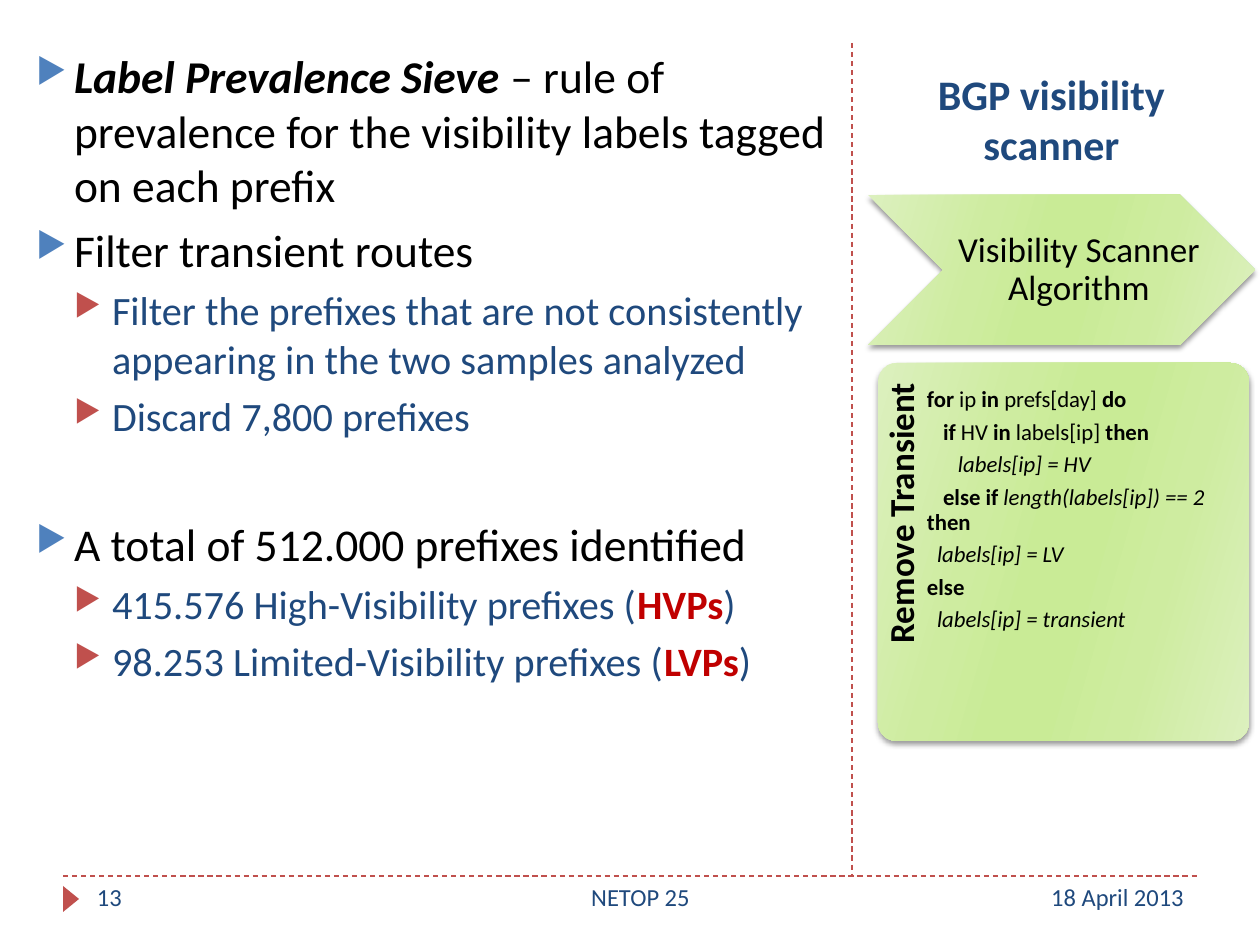
from dataclasses import dataclass

from lxml import etree
from pptx import Presentation
from pptx.dml.color import RGBColor
from pptx.enum.dml import MSO_LINE
from pptx.enum.shapes import MSO_CONNECTOR, MSO_SHAPE
from pptx.enum.text import MSO_ANCHOR, PP_ALIGN
from pptx.oxml.ns import qn
from pptx.util import Emu, Pt

LEFT, CENTER, RIGHT = PP_ALIGN.LEFT, PP_ALIGN.CENTER, PP_ALIGN.RIGHT
TOP, MIDDLE, BOTTOM = MSO_ANCHOR.TOP, MSO_ANCHOR.MIDDLE, MSO_ANCHOR.BOTTOM
EMU_PER_PX = 914400 / 126


@dataclass(frozen=True)
class Theme:
    font: str = "Calibri"
    black: str = "000000"
    navy: str = "1F497D"
    blue: str = "4F81BD"
    red: str = "C0504D"
    strong_red: str = "C00000"
    green_stops: tuple = ((0, "DCF0BE"), (30, "CEECA0"), (45, "C9EB96"),
                          (55, "C9EB96"), (73, "CEECA0"), (100, "DCF0BE"))
    title: int = 24
    point: int = 26
    subpoint: int = 23
    label: int = 20
    footer: int = 14
    code: int = 13


THEME = Theme()

# Each bullet: level, space before in points, runs of (text, style, colour)
BULLETS = [
    (0, 6, [("Label Prevalence Sieve ", "bi", THEME.black),
            ("– rule of prevalence for the visibility labels tagged on each prefix",
             "", THEME.black)]),
    (0, 6, [("Filter transient routes", "", THEME.black)]),
    (1, 5, [("Filter the prefixes that are not consistently appearing in the "
             "two samples analyzed", "", THEME.navy)]),
    (1, 5, [("Discard 7,800 prefixes", "", THEME.navy)]),
    (0, 44, [("A total of 512.000 prefixes identified", "", THEME.black)]),
    (1, 5, [("415.576 High-Visibility prefixes (", "", THEME.navy),
            ("HVPs", "b", THEME.strong_red), (")", "", THEME.navy)]),
    (1, 5, [("98.253 Limited-Visibility prefixes (", "", THEME.navy),
            ("LVPs", "b", THEME.strong_red), (")", "", THEME.navy)]),
]

# Each code line: first-line indent in px, runs of (text, style)
CODE = [
    (0, [("for ", "b"), ("ip ", ""), ("in ", "b"), ("prefs[day] ", ""), ("do", "b")]),
    (16, [("if", "b"), (" HV ", ""), ("in", "b"), (" labels[ip] ", ""), ("then", "b")]),
    (31, [("labels[ip] = HV", "i")]),
    (16, [("else if ", "b"), ("length(labels[ip]) == 2 ", "i"), ("then", "b")]),
    (10, [("labels[ip] = LV", "i")]),
    (0, [("else", "b")]),
    (10, [("labels[ip] = transient", "i")]),
]


def px(value):
    return Emu(round(value * EMU_PER_PX))


def rgb(color):
    return RGBColor.from_string(color)


def add_line(page, x1, y1, x2, y2):
    line = page.shapes.add_connector(MSO_CONNECTOR.STRAIGHT, px(x1), px(y1), px(x2), px(y2))
    line.line.color.rgb = rgb(THEME.red)
    line.line.width = Pt(0.75)
    line.line.dash_style = MSO_LINE.DASH
    etree.SubElement(line._element.spPr, qn("a:effectLst"))


def add_shape(page, kind, left, top, width, height):
    shape = page.shapes.add_shape(kind, px(left), px(top), px(width), px(height))
    shape.shadow.inherit = False
    shape.line.fill.background()
    return shape


def add_color(parent, color):
    return etree.SubElement(parent, qn("a:srgbClr"), val=color)


def add_green_shape(page, kind, *place):
    """Add a shape with the six-stop green gradient and a soft shadow below."""
    shape = add_shape(page, kind, *place)
    shape.fill.gradient()
    shape.fill.gradient_angle = 344
    properties = shape._element.spPr
    stops = properties.find(qn("a:gradFill")).find(qn("a:gsLst"))
    for stop in list(stops):
        stops.remove(stop)
    for position, color in THEME.green_stops:
        add_color(etree.SubElement(stops, qn("a:gs"), pos=str(position * 1000)), color)
    shadow = etree.SubElement(properties.find(qn("a:effectLst")), qn("a:outerShdw"),
                              blurRad=str(Pt(3)), dist=str(Pt(2)), dir="5400000",
                              rotWithShape="0")
    etree.SubElement(add_color(shadow, THEME.black), qn("a:alpha"), val="40000")
    return shape


def add_box(page, left, top, width, height, anchor=TOP, insets=(13, 6, 13, 6)):
    box = page.shapes.add_textbox(px(left), px(top), px(width), px(height))
    frame = box.text_frame
    frame.word_wrap = True
    frame.vertical_anchor = anchor
    (frame.margin_left, frame.margin_top,
     frame.margin_right, frame.margin_bottom) = map(px, insets)
    return box


def add_run(para, text, size, color, style=""):
    """Add a run; style holds "b" for bold and "i" for italic."""
    span = para.add_run()
    span.text = text
    span.font.name = THEME.font
    span.font.size = Pt(size)
    span.font.color.rgb = rgb(color)
    span.font.bold = "b" in style
    span.font.italic = "i" in style


def add_label(box, text, size, color, align, style="", spacing=1.0):
    para = box.text_frame.paragraphs[0]
    para.alignment = align
    para.line_spacing = spacing
    add_run(para, text, size, color, style)


def add_paragraphs(box, count):
    frame = box.text_frame
    return [frame.paragraphs[0]] + [frame.add_paragraph() for _ in range(count - 1)]


def set_bullet(para, level):
    properties = para._p.get_or_add_pPr()
    properties.set("marL", str(px(38 * (level + 1))))
    properties.set("indent", str(px(-38)))
    color = etree.SubElement(properties, qn("a:buClr"))
    add_color(color, THEME.red if level else THEME.blue)
    etree.SubElement(properties, qn("a:buSzPct"), val="76000")
    etree.SubElement(properties, qn("a:buChar"), char="▶")


def add_bullets(page):
    box = add_box(page, 23, 42, 827, 788)
    for para, (level, before, runs) in zip(add_paragraphs(box, len(BULLETS)), BULLETS):
        para.level = level
        para.space_before = Pt(before)
        set_bullet(para, level)
        for text, style, color in runs:
            add_run(para, text, THEME.subpoint if level else THEME.point, color, style)


def add_code(page):
    box = add_box(page, 927, 382, 299, 378, insets=(0, 6, 0, 0))
    for para, (indent, runs) in zip(add_paragraphs(box, len(CODE)), CODE):
        para.line_spacing = 0.9
        para.space_after = Pt(4.55)
        properties = para._p.get_or_add_pPr()
        properties.set("marL", "0")
        properties.set("indent", str(px(indent)))
        for text, style in runs:
            add_run(para, text, THEME.code, THEME.black, style)


def add_footer(page):
    marker = add_shape(page, MSO_SHAPE.ISOSCELES_TRIANGLE, 58, 891, 26, 16)
    marker.rotation = 90
    marker.fill.solid()
    marker.fill.fore_color.rgb = rgb(THEME.red)
    for left, width, text, align in ((84, 273, "13", LEFT),
                                     (399, 483, "NETOP 25", CENTER),
                                     (882, 315, "18 April 2013", RIGHT)):
        add_label(add_box(page, left, 876, width, 50), text, THEME.footer, THEME.navy, align)


def add_scanner(page):
    add_label(add_box(page, 858, 59, 387, 116, BOTTOM), "BGP visibility scanner",
              THEME.title, THEME.navy, CENTER, "b")
    add_green_shape(page, MSO_SHAPE.CHEVRON, 868, 195, 387, 150)
    add_label(add_box(page, 925, 195, 300, 150, MIDDLE, (13, 5, 5, 5)),
              "Visibility Scanner Algorithm", THEME.label, THEME.black, CENTER, spacing=0.9)
    panel = add_green_shape(page, MSO_SHAPE.ROUNDED_RECTANGLE, 878, 363, 371, 378)
    panel.adjustments[0] = 0.05
    add_code(page)
    side = add_box(page, 725, 527, 356, 50, insets=(0, 6, 9, 0))
    side.rotation = 270
    add_label(side, "Remove Transient", THEME.label, THEME.black, RIGHT, "b", 0.9)


def main():
    deck = Presentation()
    deck.slide_width, deck.slide_height = px(1260), px(945)
    page = deck.slides.add_slide(deck.slide_layouts[6])
    add_line(page, 63, 876, 1197, 876)
    add_line(page, 852, 43, 852, 874)
    add_footer(page)
    add_bullets(page)
    add_scanner(page)
    deck.save("out.pptx")


if __name__ == "__main__":
    main()
